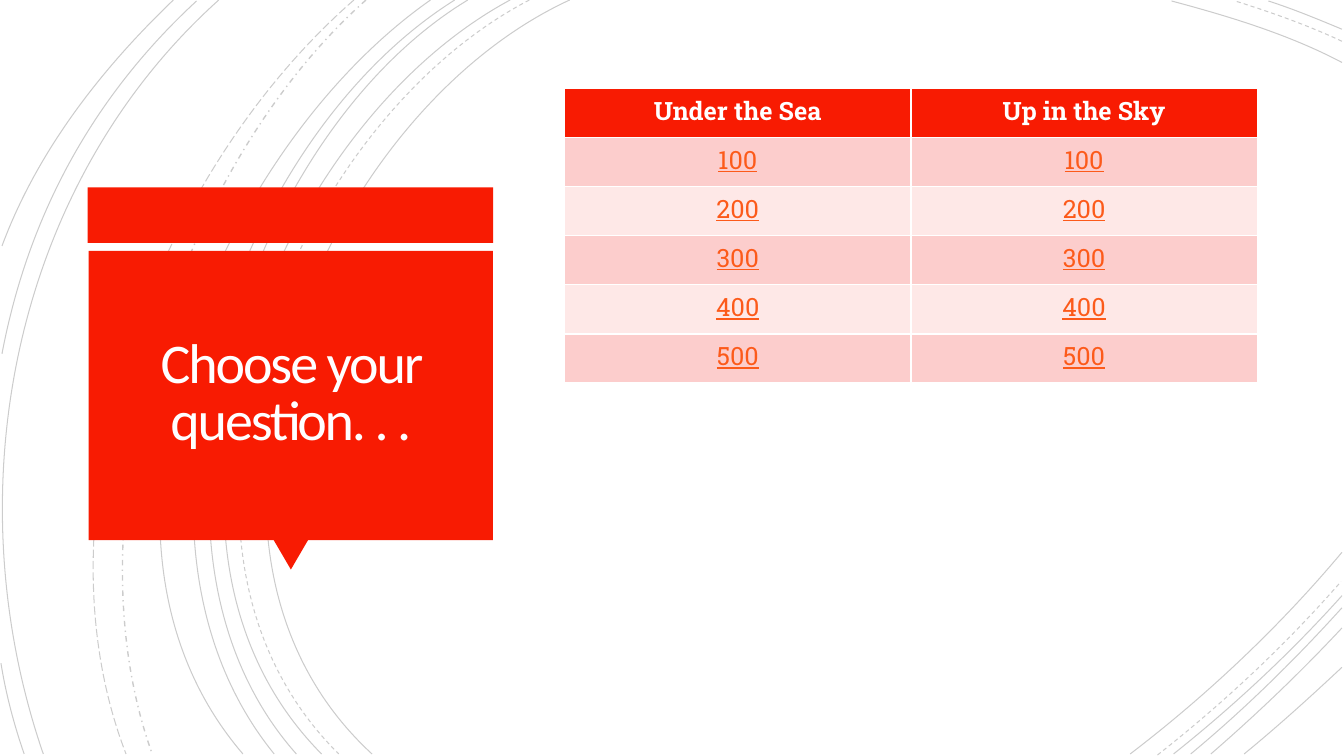
from lxml import etree
from pptx import Presentation
from pptx.dml.color import RGBColor
from pptx.enum import dml, shapes, text
from pptx.oxml.ns import qn
from pptx.util import Inches, Pt

TITLE = "Choose your question. . ."
HEADS = ["Under the Sea", "Up in the Sky"]
POINTS = ["100", "200", "300", "400", "500"]

THEME = {
    "red": "F81B02", "white": "FFFFFF", "title": "FFFEFF", "link": "FC5A1A",
    "bands": ["FCCDCC", "FEE8E7"], "arc": "000000", "alpha": 20,
    "head": "Calibri", "body": "Roboto Slab", "big": 40, "text": 18,
}

SOLID, DASH = dml.MSO_LINE.SOLID, dml.MSO_LINE.DASH
DOT, LONG = dml.MSO_LINE.DASH_DOT, dml.MSO_LINE.LONG_DASH

# Each arc: dash, width, then start, two control points and end
ARCS = [
    (SOLID, 0.75, [(5.65, 0), (3.15, 1.15), (1.43, 5.4), (3.69, 7.48)]),
    (SOLID, 0.75, [(13.31, 0.62), (12.78, 0.34), (12.18, 0.16), (11.62, 0.01)]),
    (SOLID, 0.75, [(11.21, 7.48), (11.97, 6.9), (12.69, 6.22), (13.31, 5.48)]),
    (DASH, 0.75, [(5.25, 0), (2.85, 1.25), (1.23, 5.37), (3.36, 7.48)]),
    (DASH, 0.75, [(13.31, 0.41), (12.97, 0.25), (12.6, 0.12), (12.25, 0.01)]),
    (DASH, 0.75, [(11.48, 7.49), (12.13, 6.98), (12.75, 6.4), (13.3, 5.77)]),
    (SOLID, 0.75, [(5.06, 0), (2.7, 1.27), (1.1, 5.37), (3.19, 7.48)]),
    (SOLID, 0.75, [(13.31, 0.29), (13.07, 0.19), (12.83, 0.09), (12.58, 0.01)]),
    (SOLID, 0.75, [(11.64, 7.48), (12.23, 7.01), (12.8, 6.48), (13.31, 5.91)]),
    (SOLID, 0.75, [(4.64, 0), (2.44, 1.33), (1.1, 5.41), (2.94, 7.48)]),
    (SOLID, 0.75, [(11.81, 7.48), (12.34, 7.04), (12.84, 6.55), (13.31, 6.03)]),
    (SOLID, 0.75, [(4.51, 0), (2.31, 1.38), (0.97, 5.33), (2.72, 7.48)]),
    (SOLID, 0.75, [(12.01, 7.48), (12.46, 7.09), (12.9, 6.67), (13.31, 6.23)]),
    (SOLID, 0.75, [(4.27, 0), (2.17, 1.47), (0.53, 5.29), (2.41, 7.48)]),
    (SOLID, 0.75, [(12.34, 7.48), (12.67, 7.21), (12.99, 6.92), (13.31, 6.62)]),
    (DOT, 1, [(3.63, 0), (1.76, 1.66), (0.65, 5.09), (1.51, 7.48)]),
    (LONG, 0.75, [(3.51, 0), (1.57, 1.69), (0.29, 4.99), (1.25, 7.48)]),
    (SOLID, 0.75, [(2.17, 0), (0.11, 1.85), (-0.46, 4.9), (0.43, 7.48)]),
    (SOLID, 0.75, [(1.95, 0.01), (0.92, 0.96), (0.28, 2.14), (0.02, 3.51)]),
    (SOLID, 0.75, [(0.01, 6.58), (0.06, 6.89), (0.14, 7.19), (0.24, 7.48)]),
    (SOLID, 0.75, [(1.72, 0), (1, 0.69), (0.37, 1.5), (0.02, 2.44)]),
]

RECT = shapes.MSO_SHAPE.RECTANGLE
CARD = [  # preset, box, turn
    (RECT, (0.87, 1.86, 4.02, 0.55), 0),
    (shapes.MSO_SHAPE.ISOSCELES_TRIANGLE, (2.71, 5.35, 0.35, 0.3), 180),
    (RECT, (0.88, 2.49, 4.01, 2.87), 0),
]
TITLE_BOX = (0.97, 2.57, 3.83, 2.69)
TABLE_BOX = (5.6, 0.88, 6.87, 2.92)


def rgb(name):
    return RGBColor.from_string(name)


def inches(box):
    return [Inches(n) for n in box]


def assign(item, values):
    for name, value in values.items():
        setattr(item, name, value)


def insets(x, y):
    return {"margin_left": Inches(x), "margin_right": Inches(x),
            "margin_top": Inches(y), "margin_bottom": Inches(y)}


def write(frame, words, color, **form):
    para = frame.paragraphs[0]
    para.alignment = text.PP_ALIGN.CENTER
    run = para.add_run()
    run.text = words
    assign(run.font, form)
    run.font.color.rgb = rgb(color)
    return para, run


def bend(arc):
    """Turn the three straight parts of a freeform into one cubic curve."""
    parts = list(arc._element.iter(qn("a:lnTo")))
    cubic = etree.SubElement(parts[0].getparent(), qn("a:cubicBezTo"))
    for part in parts:
        cubic.append(part[0])
        part.getparent().remove(part)


def draw_arc(slide, dash, width, ends):
    start, *rest = [inches(p) for p in ends]
    pen = slide.shapes.build_freeform(*start)
    pen.add_line_segments(rest, close=False)
    arc = pen.convert_to_shape()
    bend(arc)
    arc.shadow.inherit = False
    arc.fill.background()
    arc.line.color.rgb = rgb(THEME["arc"])
    assign(arc.line, {"width": Pt(width), "dash_style": dash})
    tone = arc.line._ln.find(".//" + qn("a:srgbClr"))
    etree.SubElement(tone, qn("a:alpha"), val=str(THEME["alpha"] * 1000))


def draw_card(slide):
    for kind, box, turn in CARD:
        part = slide.shapes.add_shape(kind, *inches(box))
        part.shadow.inherit = False
        part.fill.solid()
        part.fill.fore_color.rgb = rgb(THEME["red"])
        part.line.fill.background()
        part.rotation = turn


def place_title(slide):
    title = slide.shapes.title
    slide.shapes._spTree.append(title._element)  # bring in front of the card
    assign(title, dict(zip(("left", "top", "width", "height"), inches(TITLE_BOX))))
    frame = title.text_frame
    assign(frame, {"word_wrap": True, "auto_size": text.MSO_AUTO_SIZE.NONE,
                   "vertical_anchor": text.MSO_ANCHOR.MIDDLE, **insets(0.25, 0.25)})
    para, run = write(frame, TITLE, THEME["title"],
                      name=THEME["head"], size=Pt(THEME["big"]))
    para.line_spacing = 0.85
    run.font._element.set("spc", "-150")


def draw_table(slide):
    """Fill the grid; its default style already rules it in white."""
    rows = [HEADS] + [[p] * len(HEADS) for p in POINTS]
    grid = slide.shapes.add_table(len(rows), len(HEADS), *inches(TABLE_BOX)).table
    for r, row in enumerate(rows):
        head = r == 0
        fill = THEME["red"] if head else THEME["bands"][(r - 1) % 2]
        for c, words in enumerate(row):
            cell = grid.cell(r, c)
            assign(cell, insets(0.06, 0.05))
            cell.fill.solid()
            cell.fill.fore_color.rgb = rgb(fill)
            write(cell.text_frame, words, THEME["white" if head else "link"],
                  name=THEME["body"], size=Pt(THEME["text"]),
                  bold=head, underline=not head)


def main():
    deck = Presentation()
    assign(deck, {"slide_width": Inches(13.33), "slide_height": Inches(7.5)})
    slide = deck.slides.add_slide(deck.slide_layouts[5])
    for arc in ARCS:
        draw_arc(slide, *arc)
    draw_card(slide)
    place_title(slide)
    draw_table(slide)
    deck.save("out.pptx")


if __name__ == "__main__":
    main()
